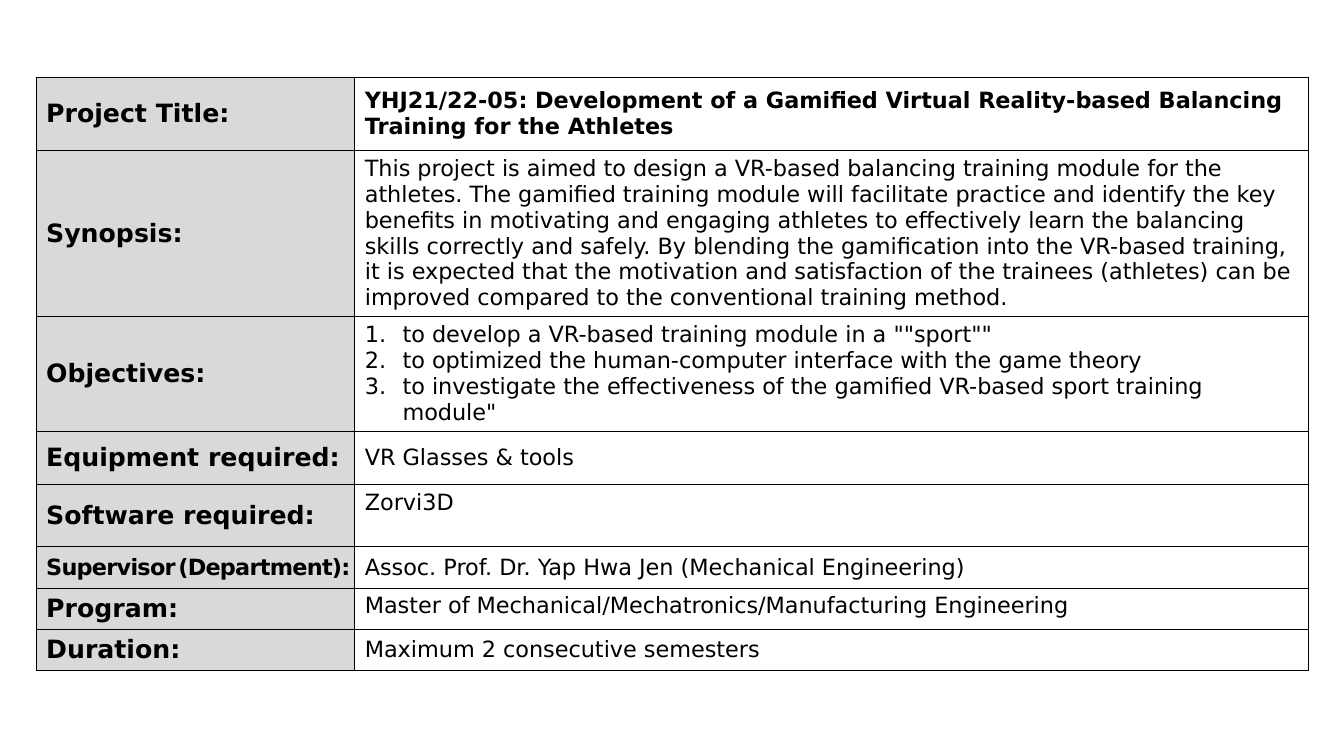
from dataclasses import dataclass

import pptx
import pptx.dml.color
import pptx.enum.text
import pptx.oxml
import pptx.oxml.ns
import pptx.presentation
import pptx.table
import pptx.text.text
import pptx.util

Cm = pptx.util.Cm
Pt = pptx.util.Pt
RGBColor = pptx.dml.color.RGBColor
Anchor = pptx.enum.text.MSO_ANCHOR


@dataclass(frozen=True)
class Theme:
    font: str = "DejaVu Sans"
    ink: RGBColor = RGBColor(0, 0, 0)
    label_fill: RGBColor = RGBColor(0xD9, 0xD9, 0xD9)
    value_fill: RGBColor = RGBColor(255, 255, 255)
    label_size: float = 18
    value_size: float = 16
    gap_size: float = 5
    border: float = 1


THEME = Theme()


@dataclass(frozen=True)
class Piece:
    """A stretch of text in one format; spacing is in points."""
    text: str
    size: float = THEME.value_size
    bold: bool = False
    spacing: float = 0


@dataclass(frozen=True)
class ProjectRow:
    height: float
    label: list[Piece]
    paragraphs: list[Piece]
    numbered: bool = False
    anchor: Anchor = Anchor.MIDDLE
    label_margin_right: float = 0.25


def label(text: str) -> list[Piece]:
    return [Piece(text, THEME.label_size, bold=True)]


SUPERVISOR = [
    Piece("Supervisor", bold=True, spacing=-0.5),
    Piece(" ", THEME.gap_size, bold=True, spacing=-0.5),
    Piece("(Department):", bold=True, spacing=-0.5),
]

ROWS = [
    ProjectRow(1.83, label("Project Title:"), [Piece(
        "YHJ21/22-05: Development of a Gamified Virtual Reality-based "
        "Balancing Training for the Athletes", bold=True)]),
    ProjectRow(4.18, label("Synopsis:"), [Piece(
        "This project is aimed to design a VR-based balancing training module "
        "for the athletes. The gamified training module will facilitate "
        "practice and identify the key benefits in motivating and engaging "
        "athletes to effectively learn the balancing skills correctly and "
        "safely. By blending the gamification into the VR-based training, it "
        "is expected that the motivation and satisfaction of the trainees "
        "(athletes) can be improved compared to the conventional training "
        "method.")]),
    ProjectRow(2.9, label("Objectives:"), [
        Piece('to develop a VR-based training module in a ""sport""'),
        Piece("to optimized the human-computer interface with the game theory"),
        Piece("to investigate the effectiveness of the gamified VR-based "
              'sport training module"'),
    ], numbered=True),
    ProjectRow(1.34, label("Equipment required:"),
               [Piece("VR Glasses & tools")]),
    ProjectRow(1.57, label("Software required:"),
               [Piece("Zorvi3D")], anchor=Anchor.TOP),
    ProjectRow(1.04, SUPERVISOR, [Piece(
        "Assoc. Prof. Dr. Yap Hwa Jen (Mechanical Engineering)")],
        label_margin_right=0),
    ProjectRow(1.04, label("Program:"), [Piece(
        "Master of Mechanical/Mechatronics/Manufacturing Engineering")],
        anchor=Anchor.TOP),
    ProjectRow(1.04, label("Duration:"),
               [Piece("Maximum 2 consecutive semesters")]),
]
COLUMN_WIDTHS = (8.03, 24.03)
TABLE_LEFT, TABLE_TOP = 0.91, 1.96
NUMBER_INDENT = 0.95


def add_piece(paragraph: pptx.text.text._Paragraph, piece: Piece) -> None:
    run = paragraph.add_run()
    run.text = piece.text
    font_format = {"name": THEME.font, "size": Pt(piece.size),
                   "bold": piece.bold}
    for name, value in font_format.items():
        setattr(run.font, name, value)
    run.font.color.rgb = THEME.ink
    if piece.spacing:
        run.font._element.set("spc", str(round(piece.spacing * 100)))


def number_paragraph(paragraph: pptx.text.text._Paragraph) -> None:
    properties = paragraph._p.get_or_add_pPr()
    properties.set("marL", str(Cm(NUMBER_INDENT)))
    properties.set("indent", str(-Cm(NUMBER_INDENT)))
    properties.append(pptx.oxml.parse_xml(
        f'<a:buAutoNum {pptx.oxml.ns.nsdecls("a")} type="arabicPeriod"/>'))


def format_cell(cell: pptx.table._Cell, fill: RGBColor, anchor: Anchor) -> None:
    """Fill and anchor the cell and rule all four of its sides."""
    cell.fill.solid()
    cell.fill.fore_color.rgb = fill
    cell.vertical_anchor = anchor
    properties = cell._tc.get_or_add_tcPr()
    for position, side in enumerate(("lnL", "lnR", "lnT", "lnB")):
        properties.insert(position, pptx.oxml.parse_xml(
            f'<a:{side} {pptx.oxml.ns.nsdecls("a")} w="{Pt(THEME.border)}">'
            f'<a:solidFill><a:srgbClr val="{THEME.ink}"/></a:solidFill>'
            f'</a:{side}>'))


def fill_row(table: pptx.table.Table, index: int, row: ProjectRow) -> None:
    table.rows[index].height = Cm(row.height)
    label_cell, value_cell = table.cell(index, 0), table.cell(index, 1)
    format_cell(label_cell, THEME.label_fill, Anchor.MIDDLE)
    format_cell(value_cell, THEME.value_fill, row.anchor)
    label_cell.margin_right = Cm(row.label_margin_right)
    for piece in row.label:
        add_piece(label_cell.text_frame.paragraphs[0], piece)
    frame = value_cell.text_frame
    for position, piece in enumerate(row.paragraphs):
        paragraph = frame.add_paragraph() if position else frame.paragraphs[0]
        if row.numbered:
            number_paragraph(paragraph)
        add_piece(paragraph, piece)


def add_project_table(presentation: pptx.presentation.Presentation) -> None:
    slide = presentation.slides.add_slide(presentation.slide_layouts[6])
    table = slide.shapes.add_table(
        len(ROWS), len(COLUMN_WIDTHS), Cm(TABLE_LEFT), Cm(TABLE_TOP),
        Cm(sum(COLUMN_WIDTHS)), Cm(sum(row.height for row in ROWS))).table
    for name, value in {"first_row": False, "horz_banding": False}.items():
        setattr(table, name, value)
    for column, width in zip(table.columns, COLUMN_WIDTHS):
        column.width = Cm(width)
    for index, row in enumerate(ROWS):
        fill_row(table, index, row)


def main() -> None:
    presentation = pptx.Presentation()
    presentation.slide_width = Cm(33.87)
    presentation.slide_height = Cm(19.05)
    add_project_table(presentation)
    presentation.save("out.pptx")


if __name__ == "__main__":
    main()
